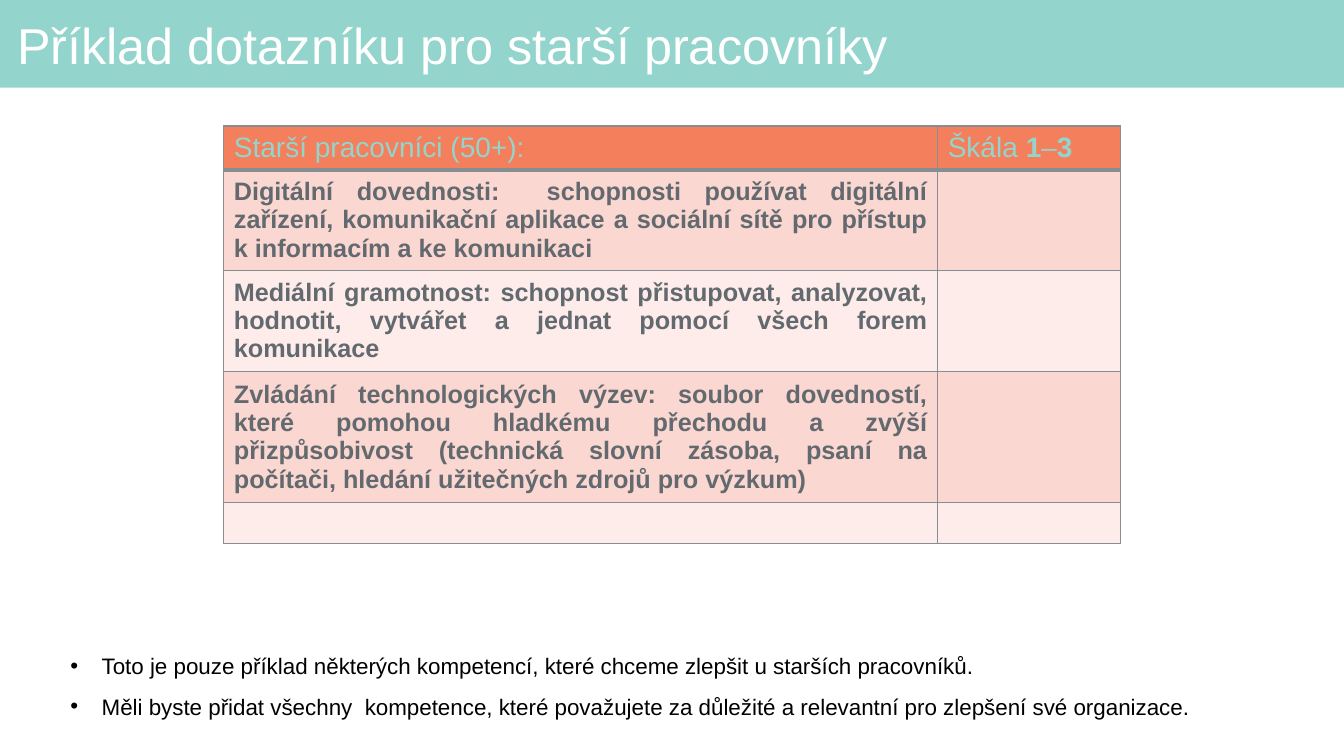
from lxml import etree
from pptx import Presentation
from pptx.dml.color import RGBColor
from pptx.enum import shapes, text
from pptx.oxml.ns import qn
from pptx.util import Inches, Pt

# Content: a paragraph is a list of (words, bold) runs
TITLE = "Příklad dotazníku pro starší pracovníky"
HEAD = [
    [("Starší pracovníci (50+):", False)],
    [("Škála ", False), ("1", True), ("–", False), ("3", True)],
]
SKILLS = [
    "Digitální dovednosti:  schopnosti používat digitální zařízení, komunikační "
    "aplikace a sociální sítě pro přístup k informacím a ke komunikaci ",
    "Mediální gramotnost: schopnost přistupovat, analyzovat, hodnotit, vytvářet "
    "a jednat pomocí všech forem komunikace",
    "Zvládání technologických výzev: soubor dovedností, které pomohou hladkému "
    "přechodu a zvýší přizpůsobivost (technická slovní zásoba, psaní na počítači, "
    "hledání užitečných zdrojů pro výzkum)",
    "",
]
NOTES = [
    "Toto je pouze příklad některých kompetencí, které chceme zlepšit u starších "
    "pracovníků.",
    "Měli byste přidat všechny  kompetence, které považujete za důležité "
    "a relevantní pro zlepšení své organizace.",
]
COLS = [7.08, 1.81]
ROWS = [0.41, 0.94, 0.94, 1.22, 0.41]
HEX = {
    "mint": "93D4CC", "white": "FFFFFF", "black": "000000", "head": "F47F5D",
    "odd": "FBD7D1", "even": "FDECE9", "grey": "636A6F", "line": "868E93",
}
JUST = text.PP_ALIGN.JUSTIFY
MID = text.MSO_ANCHOR.MIDDLE


def color(name):
    return RGBColor.from_string(HEX[name])


def write(frame, paras, size, tint, align=None, space=None, bullet=False):
    for i, runs in enumerate(paras):
        para = frame.add_paragraph() if i else frame.paragraphs[0]
        if align is not None:
            para.alignment = align
        if space:
            para.line_spacing = space
        if bullet:
            mark(para)
        for words, bold in runs:
            run = para.add_run()
            run.text = words
            font = run.font
            font.name, font.size, font.bold = "Arial", Pt(size), bold
            font.color.rgb = color(tint)


def mark(para):
    props = para._p.get_or_add_pPr()
    props.set("marL", str(Inches(0.31)))
    props.set("indent", str(-Inches(0.31)))
    tint = etree.SubElement(props, qn("a:buClr"))
    etree.SubElement(tint, qn("a:srgbClr"), val=HEX["black"])
    etree.SubElement(props, qn("a:buFont"), typeface="Arial")
    etree.SubElement(props, qn("a:buChar"), char="•")


def edge(cell, base):
    props = cell._tc.get_or_add_tcPr()
    for i, side in enumerate("LRTB"):
        width = base if side == "B" else 1
        line = etree.Element(qn("a:ln" + side), w=str(Pt(width)))
        fill = etree.SubElement(line, qn("a:solidFill"))
        etree.SubElement(fill, qn("a:srgbClr"), val=HEX["line"])
        props.insert(i, line)


def add_box(left, top, width, height, pad_x, pad_y):
    box = slide.shapes.add_textbox(*map(Inches, (left, top, width, height)))
    frame = box.text_frame
    frame.word_wrap = True
    frame.margin_left = frame.margin_right = Inches(pad_x)
    frame.margin_top = frame.margin_bottom = Inches(pad_y)
    return frame


deck = Presentation()
deck.slide_width, deck.slide_height = Inches(13.33), Inches(7.5)
slide = deck.slides.add_slide(deck.slide_layouts[6])

# Title band
band = slide.shapes.add_shape(
    shapes.MSO_SHAPE.RECTANGLE, 0, 0, deck.slide_width, Inches(0.87))
band.shadow.inherit = False
band.fill.solid()
band.fill.fore_color.rgb = color("mint")
band.line.fill.background()
frame = add_box(0.11, 0.09, 13.06, 0.78, 0.06, 0.06)
frame.vertical_anchor = MID
write(frame, [[(TITLE, False)]], 36, "white", space=0.9)

# Questionnaire
table = slide.shapes.add_table(
    len(ROWS), len(COLS), Inches(2.22), Inches(1.25),
    Inches(sum(COLS)), Inches(sum(ROWS))).table
for col, width in zip(table.columns, COLS):
    col.width = Inches(width)
for row, height in zip(table.rows, ROWS):
    row.height = Inches(height)
grid = [HEAD] + [[[(skill, True)] if skill else [], []] for skill in SKILLS]
for r, line in enumerate(grid):
    shade = "head" if r == 0 else "odd" if r % 2 else "even"
    for c, runs in enumerate(line):
        cell = table.cell(r, c)
        cell.vertical_anchor = MID
        cell.fill.solid()
        cell.fill.fore_color.rgb = color(shade)
        edge(cell, 1 if r else 3)
        write(cell.text_frame, [runs], 18 if r else 20, "grey" if r else "mint",
              align=None if c else JUST)

# Notes below the table
frame = add_box(0.6, 6.29, 12.51, 1.18, 0.1, 0.05)
write(frame, [[(note, False)] for note in NOTES], 16, "black",
      space=1.5, bullet=True)

deck.save("out.pptx")
